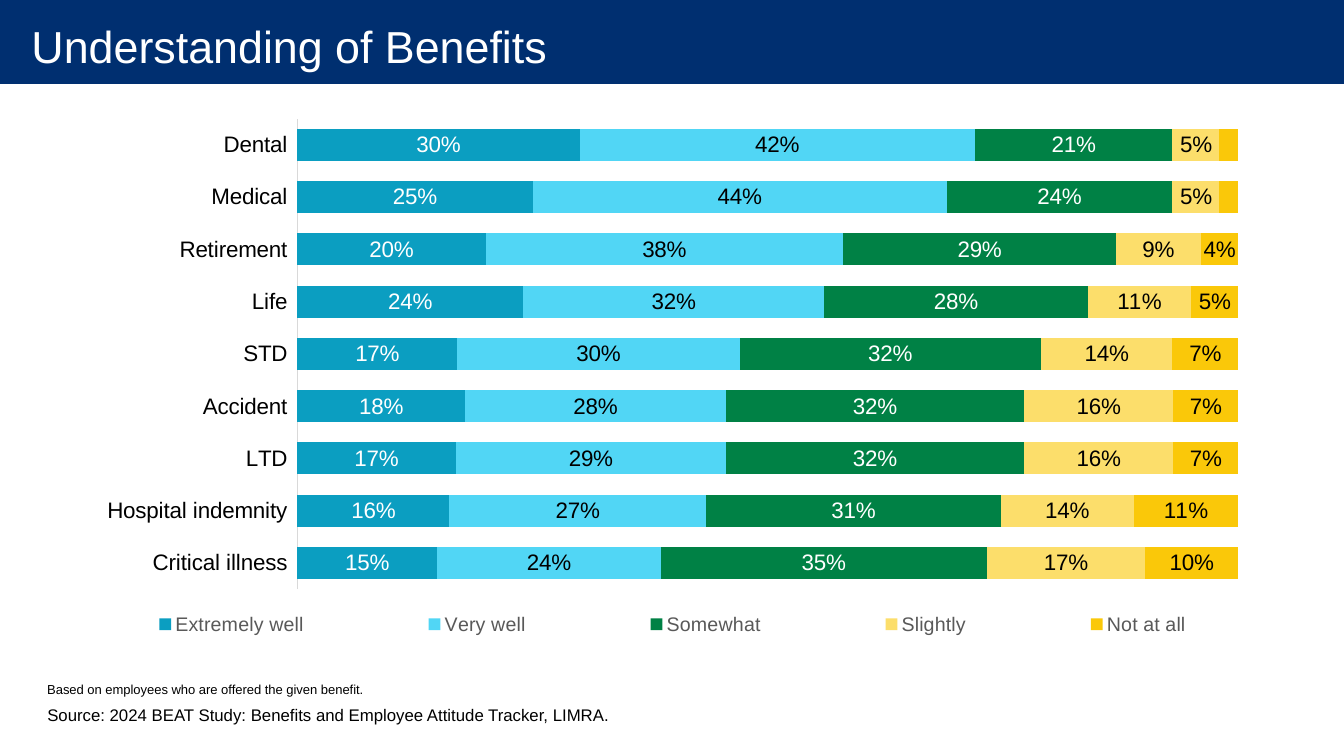
from lxml import etree
from pptx import Presentation
from pptx.chart.data import CategoryChartData
from pptx.dml.color import RGBColor
from pptx.enum.chart import XL_CHART_TYPE as CHART, XL_LABEL_POSITION as LABEL_POS
from pptx.enum.chart import XL_LEGEND_POSITION as LEGEND_POS, XL_TICK_LABEL_POSITION as TICK_POS
from pptx.enum.chart import XL_TICK_MARK as TICK
from pptx.enum.shapes import MSO_SHAPE
from pptx.enum.text import MSO_ANCHOR, PP_ALIGN
from pptx.oxml import parse_xml
from pptx.oxml.ns import nsdecls, qn
from pptx.util import Pt

PX = 9525
COLORS = {
    "navy": "002F70", "white": "FFFFFF", "black": "000000", "gray": "595959", "axis": "D9D9D9",
    "teal": "0B9EC1", "sky": "51D6F5", "green": "008145", "cream": "FCDE6B", "gold": "FAC809",
}
CATEGORIES = ["Critical illness", "Hospital indemnity", "LTD", "Accident", "STD",
              "Life", "Retirement", "Medical", "Dental"]
# name, fill, label color, percentages
SERIES = [
    ("Extremely well", "teal", "white", [15, 16, 17, 18, 17, 24, 20, 25, 30]),
    ("Very well", "sky", "black", [24, 27, 29, 28, 30, 32, 38, 44, 42]),
    ("Somewhat", "green", "white", [35, 31, 32, 32, 32, 28, 29, 24, 21]),
    ("Slightly", "cream", "black", [17, 14, 16, 16, 14, 11, 9, 5, 5]),
    ("Not at all", "gold", "black", [10, 11, 7, 7, 7, 5, 4, 2, 2]),
]
MIN_LABELED = 3
# left, top, width, height, text, size, color, left inset, wrap
TEXTS = [
    (1, -3, 1280, 93, "Understanding of Benefits", 32, "white", 29, True),
    (35, 644, 641, 25, "Based on employees who are offered the given benefit.", 9.3, "black", 10, True),
    (35, 666, 560, 29, "Source: 2024 BEAT Study: Benefits and Employee Attitude Tracker, LIMRA.",
     12, "black", 10, False),
]


def set_font(font, size, color):
    font.name, font.size, font.bold = "Arial", Pt(size), False
    font.color.rgb = RGBColor.from_string(COLORS[color])


def set_layout(parent, index, target, x, y, w, h):
    """Place a chart part by fractions of the chart area."""
    for old in parent.findall(qn("c:layout")):
        parent.remove(old)
    layout = parse_xml(f"<c:layout {nsdecls('c')}><c:manualLayout/></c:layout>")
    values = {"xMode": "edge", "yMode": "edge", "x": x, "y": y, "w": w, "h": h}
    if target:
        values = {"layoutTarget": target, **values}
    for tag, val in values.items():
        etree.SubElement(layout[0], qn(f"c:{tag}")).set("val", str(val))
    parent.insert(index, layout)


prs = Presentation()
prs.slide_width, prs.slide_height = 1280 * PX, 720 * PX
s = prs.slides.add_slide(prs.slide_layouts[6])

band = s.shapes.add_shape(MSO_SHAPE.RECTANGLE, 0, 0, 1280 * PX, 80 * PX)
band.shadow.inherit = False
band.fill.solid()
band.fill.fore_color.rgb = RGBColor.from_string(COLORS["navy"])
band.line.fill.background()

data = CategoryChartData(number_format="0%")
data.categories = CATEGORIES
for name, _, _, percents in SERIES:
    data.add_series(name, [v / 100 for v in percents])
chart = s.shapes.add_chart(CHART.BAR_STACKED_100, 39 * PX, 90 * PX, 1203 * PX, 523 * PX, data).chart
set_font(chart.font, 24, "black")
chart.has_title = False

plot = chart.plots[0]
plot.gap_width, plot.overlap, plot.vary_by_categories = 63, 100, False
for series, (_, fill, label_color, percents) in zip(plot.series, SERIES):
    series.format.fill.solid()
    series.format.fill.fore_color.rgb = RGBColor.from_string(COLORS[fill])
    labels = series.data_labels
    for key, val in {"show_value": True, "position": LABEL_POS.CENTER,
                     "number_format": "0%", "number_format_is_linked": False}.items():
        setattr(labels, key, val)
    set_font(labels.font, 16, label_color)
    hidden = [i for i, v in enumerate(percents) if v < MIN_LABELED]
    for pos, i in enumerate(hidden):
        labels._element.insert(pos, parse_xml(
            f'<c:dLbl {nsdecls("c")}><c:idx val="{i}"/><c:delete val="1"/></c:dLbl>'))

cat_axis, val_axis = chart.category_axis, chart.value_axis
cat_axis.major_tick_mark = cat_axis.minor_tick_mark = TICK.NONE
cat_axis.tick_label_position = TICK_POS.LOW
cat_axis.format.line.color.rgb = RGBColor.from_string(COLORS["axis"])
cat_axis.format.line.width = Pt(0.75)
set_font(cat_axis.tick_labels.font, 16, "black")
val_axis.has_major_gridlines = val_axis.visible = False
val_axis.minimum_scale, val_axis.maximum_scale = 0, 1

chart.has_legend = True
legend = chart.legend
legend.position, legend.include_in_layout = LEGEND_POS.BOTTOM, False
set_font(legend.font, 14, "gray")
set_layout(legend._element, 1, None, 0, 0.93, 1, 0.07)
set_layout(chart._chartSpace.chart.plotArea, 0, "inner", 0.203, 0.044, 0.745, 0.857)

for x, y, w, h, text, size, color, inset, wrap in TEXTS:
    tf = s.shapes.add_textbox(x * PX, y * PX, w * PX, h * PX).text_frame
    tf.word_wrap, tf.vertical_anchor = wrap, MSO_ANCHOR.MIDDLE
    tf.margin_left = inset * PX
    p = tf.paragraphs[0]
    p.alignment = PP_ALIGN.LEFT
    r = p.add_run()
    r.text = text
    set_font(r.font, size, color)

prs.save("out.pptx")
